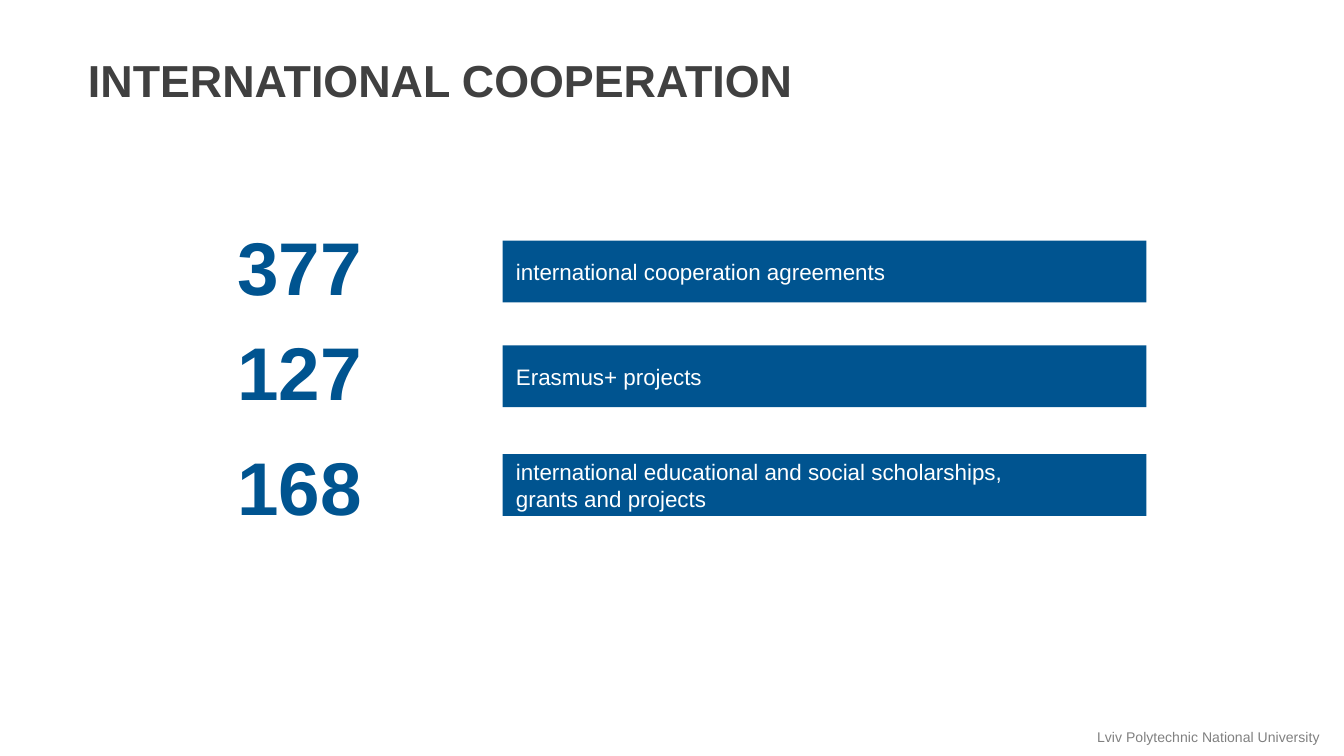
import pptx
import pptx.util
import pptx.dml.color
import pptx.enum.shapes
import pptx.enum.text

Inches = pptx.util.Inches
Pt = pptx.util.Pt
ALIGN = pptx.enum.text.PP_ALIGN
ANCHOR = pptx.enum.text.MSO_ANCHOR

BLUE, WHITE, DARK, GREY = "005490", "FFFFFF", "404040", "808080"
HEADING = "INTERNATIONAL COOPERATION"
UNIVERSITY = "Lviv Polytechnic National University"
FACTS = [
    {"count": "377", "label": "international cooperation agreements", "middle": 2.02, "spacing": 0.9},
    {"count": "127", "label": "Erasmus+ projects", "middle": 2.8, "spacing": 0.9},
    {"count": "168", "label": "international educational and social scholarships,\ngrants and projects",
     "middle": 3.61, "spacing": 1.0},
]
SLIDE_WIDTH = 10
SLIDE_HEIGHT = SLIDE_WIDTH * 9 / 16
COUNT_LEFT, COUNT_WIDTH, COUNT_HEIGHT = 1.01, 2.44, 0.64
BAR_LEFT, BAR_WIDTH, BAR_HEIGHT = 3.74, 4.79, 0.46
TIGHT, ROOMY = (0.04, 0.02), (0.1, 0.05)


def color(hex_code):
    return pptx.dml.color.RGBColor.from_string(hex_code)


def write(shape, text, size, hex_code, align, anchor, margins, bold=False, wrap=True):
    frame = shape.text_frame
    frame.text = text
    frame.word_wrap = wrap
    frame.auto_size = pptx.enum.text.MSO_AUTO_SIZE.NONE
    frame.vertical_anchor = anchor
    frame.margin_left = frame.margin_right = Inches(margins[0])
    frame.margin_top = frame.margin_bottom = Inches(margins[1])
    for paragraph in frame.paragraphs:
        paragraph.alignment = align
        paragraph.line_spacing = 1.0
        for run in paragraph.runs:
            run.font.name = "Arial"
            run.font.size = Pt(size)
            run.font.bold = bold
            run.font.color.rgb = color(hex_code)
    return frame.paragraphs[0]


def box(left, top, width, height):
    return [Inches(value) for value in (left, top, width, height)]


deck = pptx.Presentation()
deck.slide_width, deck.slide_height = Inches(SLIDE_WIDTH), Inches(SLIDE_HEIGHT)
slide = deck.slides.add_slide(deck.slide_layouts[5])

heading = slide.shapes.title
heading.left, heading.top, heading.width, heading.height = box(0.59, 0.37, 5.37, 0.44)
write(heading, HEADING, 24, DARK, ALIGN.CENTER, ANCHOR.TOP, TIGHT, bold=True, wrap=False)

university = slide.shapes.add_textbox(*box(6.47, 5.38, 3.39, 0.19))
footer = write(university, UNIVERSITY, 13, GREY, ALIGN.RIGHT, ANCHOR.TOP, TIGHT)
footer.runs[0].font._element.set("baseline", "30000")

for fact in FACTS:
    bar = slide.shapes.add_shape(
        pptx.enum.shapes.MSO_SHAPE.RECTANGLE,
        *box(BAR_LEFT, fact["middle"] - BAR_HEIGHT / 2, BAR_WIDTH, BAR_HEIGHT))
    bar.shadow.inherit = False
    bar.fill.solid()
    bar.fill.fore_color.rgb = color(BLUE)
    bar.line.fill.background()
    write(bar, fact["label"], 12, WHITE, ALIGN.LEFT, ANCHOR.MIDDLE, ROOMY)

    count = slide.shapes.add_textbox(
        *box(COUNT_LEFT, fact["middle"] - COUNT_HEIGHT / 2, COUNT_WIDTH, COUNT_HEIGHT))
    figure = write(count, fact["count"], 40, BLUE, ALIGN.CENTER, ANCHOR.MIDDLE, TIGHT, bold=True)
    figure.line_spacing = fact["spacing"]

deck.save("out.pptx")
